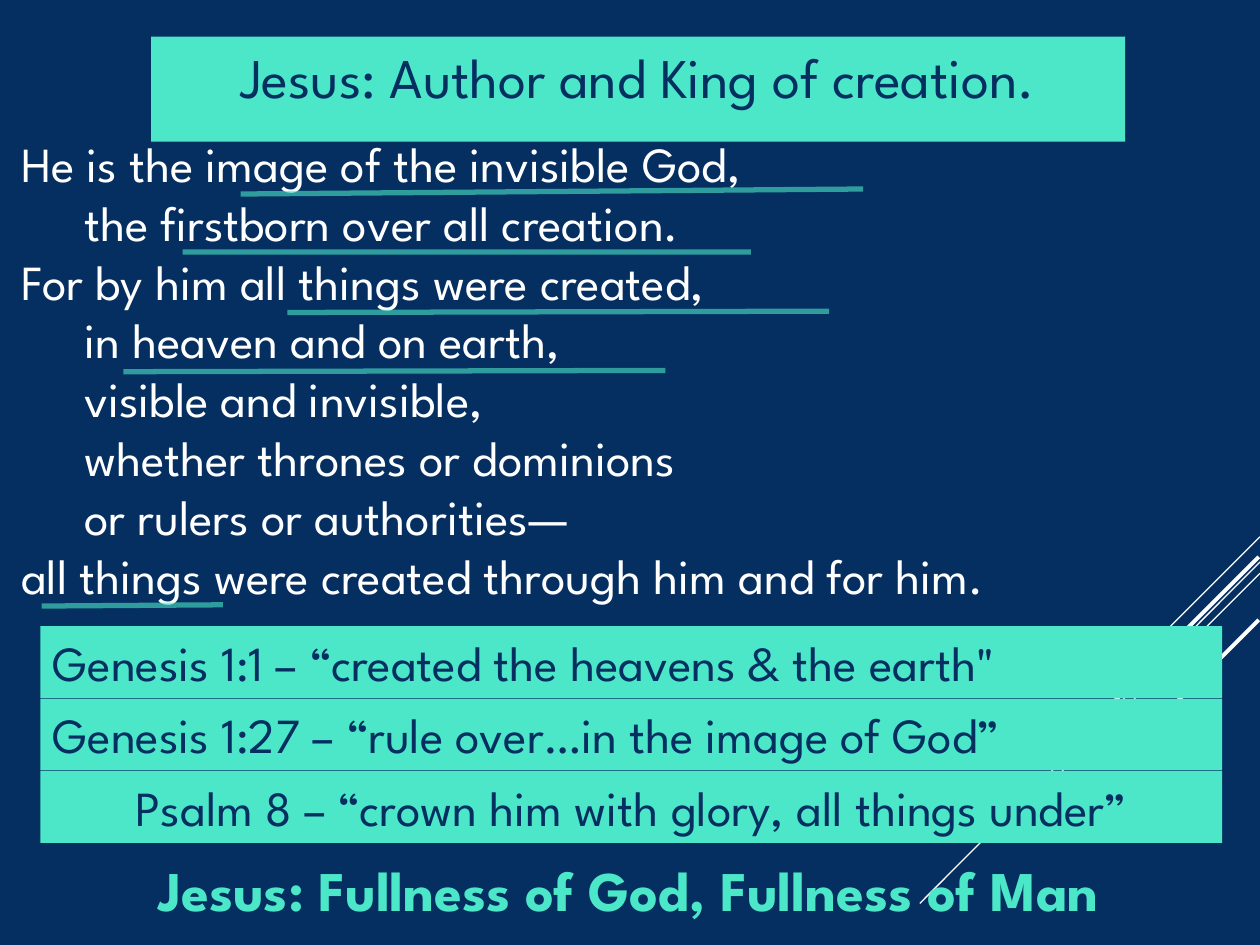
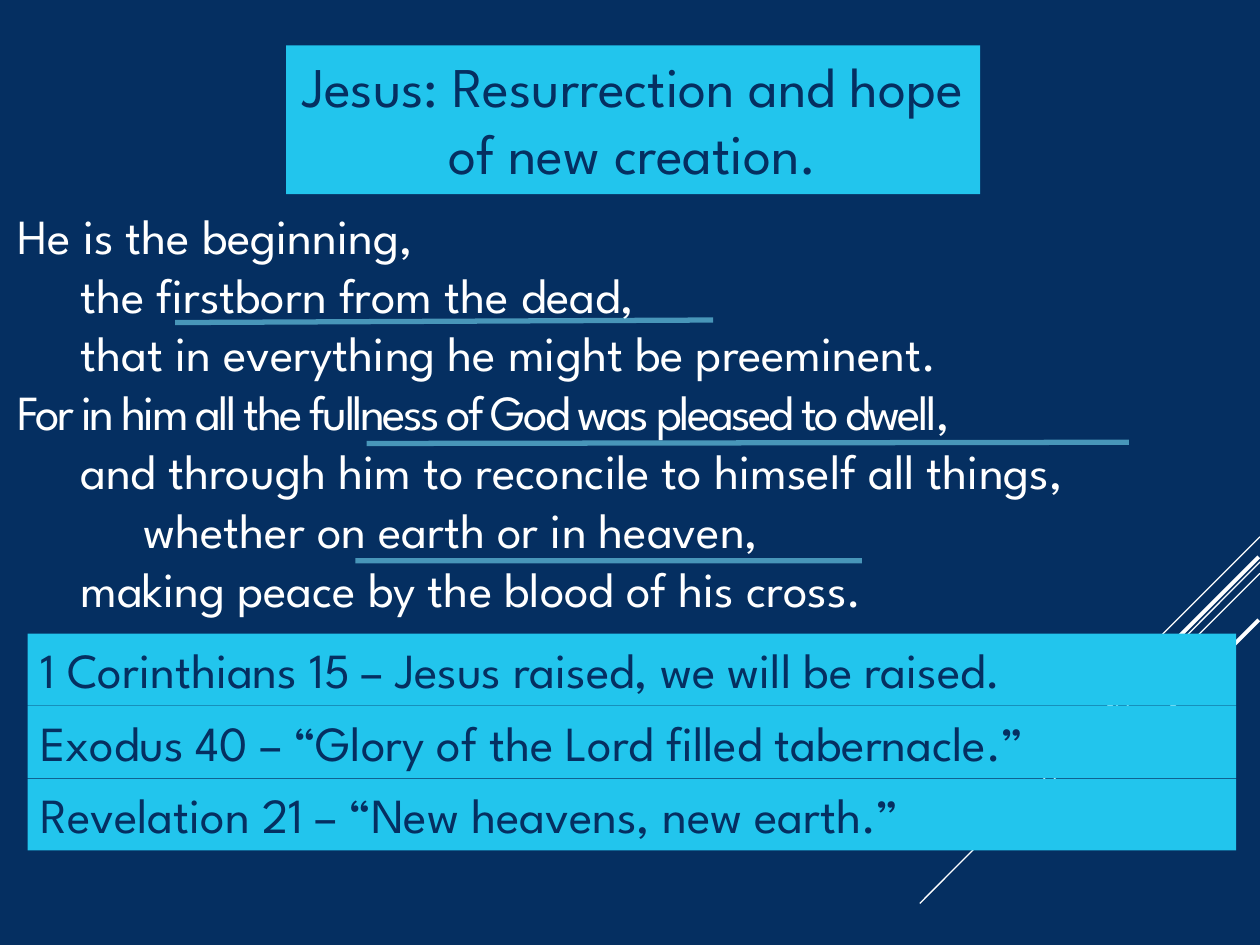
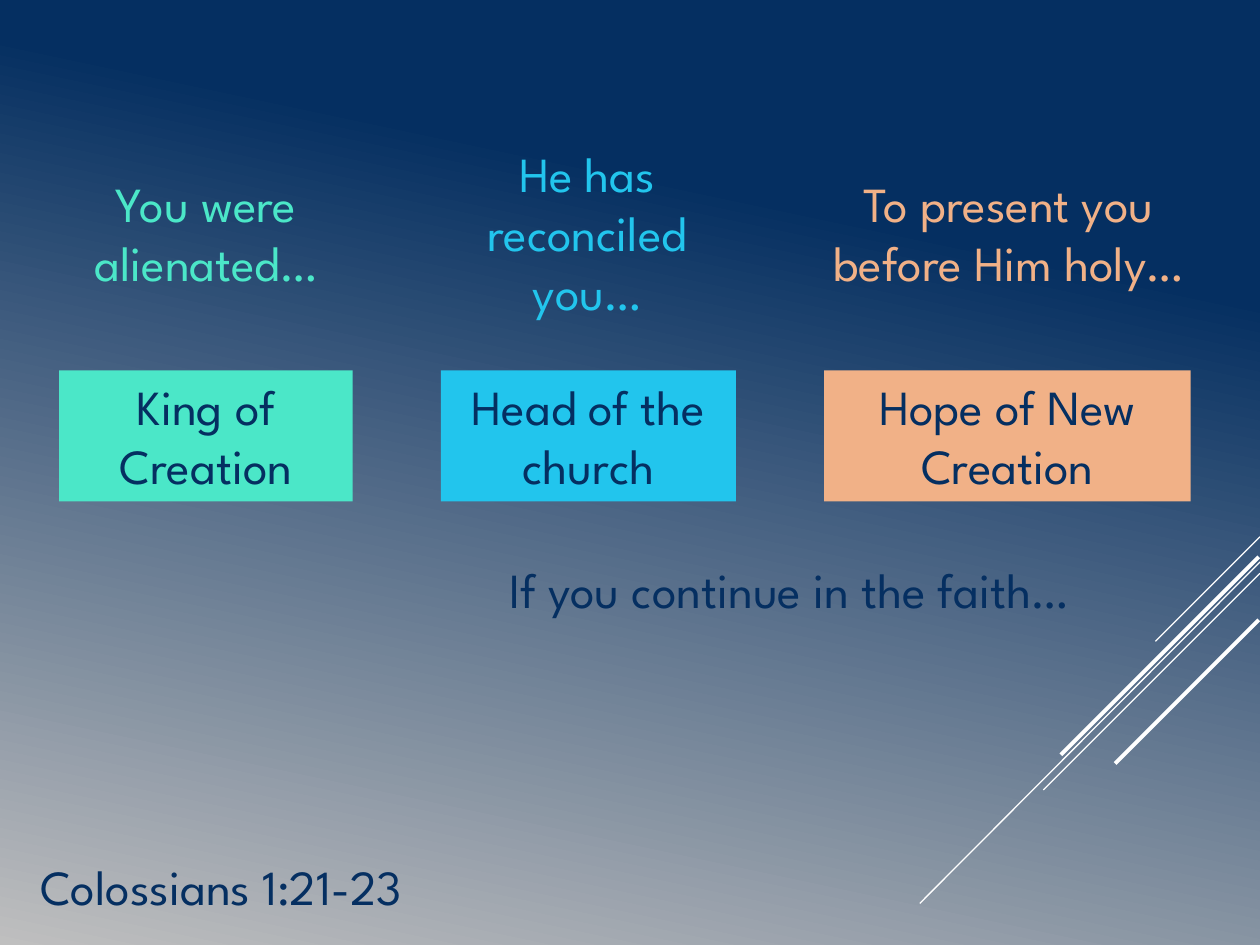
from dataclasses import dataclass

from lxml import etree
from pptx import Presentation
from pptx import util as u
from pptx.dml.color import RGBColor
from pptx.enum import shapes, text
from pptx.oxml import ns

NAVY = RGBColor(0x05, 0x2F, 0x61)
WHITE = RGBColor(0xFF, 0xFF, 0xFF)
SILVER = RGBColor(0xBF, 0xBF, 0xBF)
MINT = RGBColor(0x4B, 0xE7, 0xC8)
SKY = RGBColor(0x22, 0xC5, 0xED)
PALE_SKY = RGBColor(0x76, 0xDB, 0xF4)
PEACH = RGBColor(0xF1, 0xB1, 0x87)

FONT = "League Spartan"
BODY_SIZE = 28
TITLE_SIZE = 32
ROW_HEIGHT = 0.57
ROW_PITCH = 0.575
TITLE_ONLY, BLANK = 5, 6

DIAGONALS = [
    ((10, 4.26), (9.17, 5.09), 0.75),
    ((10, 4.46), (7.3, 7.17), 0.75),
    ((10, 4.55), (8.28, 6.27), 0.75),
    ((9.99, 4.42), (8.42, 5.99), 2.25),
    ((9.99, 4.92), (8.85, 6.06), 2.25),
]


@dataclass
class Line:
    text: str
    indent: int = 0
    tight: str = ""


def write(shape, lines, size=BODY_SIZE, color=NAVY, bold=False, centered=False):
    frame = shape.text_frame
    frame.word_wrap = True
    frame.auto_size = text.MSO_AUTO_SIZE.SHAPE_TO_FIT_TEXT
    frame.vertical_anchor = text.MSO_ANCHOR.TOP
    for index, line in enumerate(lines):
        paragraph = frame.paragraphs[0] if index == 0 else frame.add_paragraph()
        paragraph.alignment = text.PP_ALIGN.CENTER if centered else text.PP_ALIGN.LEFT
        if line.indent:
            properties = paragraph._p.get_or_add_pPr()
            properties.set("marL", str(u.Inches(0.5 * line.indent)))
            properties.set("indent", "0")
        for content, spacing in ((line.tight, "-150"), (line.text, "0")):
            if not content:
                continue
            run = paragraph.add_run()
            run.text = content
            run.font.name = FONT
            run.font.size = u.Pt(size)
            run.font.bold = bold
            run.font.color.rgb = color
            if line.tight:
                run.font._element.set("spc", spacing)


def inches(*values):
    return [u.Inches(value) for value in values]


def add_label(slide, area, lines, **style):
    write(slide.shapes.add_textbox(*inches(*area)), lines, **style)


def add_box(slide, area, caption, fill, **style):
    box = slide.shapes.add_shape(shapes.MSO_SHAPE.RECTANGLE, *inches(*area))
    box.shadow.inherit = False
    box.fill.solid()
    box.fill.fore_color.rgb = fill
    box.line.fill.background()
    write(box, [Line(caption)], **style)


def add_title(slide, area, caption, fill):
    title = slide.shapes.title
    title.left, title.top, title.width, title.height = inches(*area)
    title.fill.solid()
    title.fill.fore_color.rgb = fill
    write(title, [Line(caption)], size=TITLE_SIZE, centered=True)


def add_line(slide, start, end, color, width, opacity=100):
    line = slide.shapes.add_connector(
        shapes.MSO_CONNECTOR.STRAIGHT, *inches(*start, *end))
    line.line.color.rgb = color
    line.line.width = u.Pt(width)
    properties = line.element.spPr
    if opacity < 100:
        solid = properties.find(".//" + ns.qn("a:srgbClr"))
        etree.SubElement(solid, ns.qn("a:alpha")).set("val", str(opacity * 1000))
    etree.SubElement(properties, ns.qn("a:effectLst"))


def add_underlines(slide, spans, color):
    for start, end in spans:
        add_line(slide, start, end, color, 3, opacity=60)


def add_references(slide, left, top, width, references, fill):
    for index, (caption, centered) in enumerate(references):
        area = (left, top + index * ROW_PITCH, width, ROW_HEIGHT)
        add_box(slide, area, caption, fill, centered=centered)


def add_slide(presentation, layout):
    slide = presentation.slides.add_slide(presentation.slide_layouts[layout])
    for start, end, width in DIAGONALS:
        add_line(slide, start, end, WHITE, width)
    return slide


def build_creation(presentation):
    slide = add_slide(presentation, TITLE_ONLY)
    add_title(slide, (1.2, 0.29, 7.73, 0.64),
              "Jesus: Author and King of creation.", MINT)
    add_label(slide, (0.07, 1.01, 9.87, 3.87), [
        Line("He is the image of the invisible God,"),
        Line("the firstborn over all creation.", 1),
        Line("For by him all things were created,"),
        Line("in heaven and on earth,", 1),
        Line("visible and invisible,", 1),
        Line("whether thrones or dominions", 1),
        Line("or rulers or authorities—", 1),
        Line("all things were created through him and for him."),
    ], color=WHITE)
    add_references(slide, 0.32, 4.97, 9.38, [
        ("Genesis 1:1 – “created the heavens & the earth\"", False),
        ("Genesis 1:27 – “rule over…in the image of God”", False),
        ("Psalm 8 – “crown him with glory, all things under”", True),
    ], MINT)
    add_underlines(slide, [
        ((1.91, 1.54), (6.85, 1.5)),
        ((1.45, 2), (5.96, 2)),
        ((2.28, 2.48), (6.58, 2.47)),
        ((0.98, 2.95), (5.28, 2.94)),
        ((0.33, 4.81), (1.77, 4.8)),
    ], MINT)
    add_label(slide, (0.31, 6.74, 9.37, 0.64),
              [Line("Jesus: Fullness of God, Fullness of Man")],
              size=TITLE_SIZE, color=MINT, bold=True, centered=True)


def build_resurrection(presentation):
    slide = add_slide(presentation, TITLE_ONLY)
    add_title(slide, (2.27, 0.36, 5.51, 1.18),
              "Jesus: Resurrection and hope of new creation.", SKY)
    add_label(slide, (0.04, 1.58, 9.96, 3.4), [
        Line("He is the beginning,"),
        Line("the firstborn from the dead,", 1),
        Line("that in everything he might be preeminent.", 1),
        Line(",", tight="For in him all the fullness of God was pleased to dwell"),
        Line("and through him to reconcile to himself all things,", 1),
        Line("whether on earth or in heaven,", 2),
        Line("making peace by the blood of his cross.", 1),
    ], color=WHITE)
    add_references(slide, 0.22, 5.03, 9.59, [
        ("1 Corinthians 15 – Jesus raised, we will be raised.", False),
        ("Exodus 40 – “Glory of the Lord filled tabernacle.”", False),
        ("Revelation 21 – “New heavens, new earth.”", False),
    ], SKY)
    add_underlines(slide, [
        ((1.39, 2.56), (5.66, 2.54)),
        ((2.91, 3.52), (8.96, 3.51)),
        ((2.82, 4.45), (6.84, 4.45)),
    ], PALE_SKY)


def build_response(presentation):
    slide = add_slide(presentation, BLANK)
    fill = slide.background.fill
    fill.gradient()
    fill.gradient_angle = 258
    for stop, position, color in zip(fill.gradient_stops, (0.25, 1), (NAVY, SILVER)):
        stop.position = position
        stop.color.rgb = color
    columns = [
        (MINT, "You were alienated…", (0.34, 1.33, 2.59, 1.04),
         "King of Creation", 0.47, 2.33),
        (SKY, "He has reconciled you…", (3.31, 1.09, 2.7, 1.51),
         "Head of the church", 3.5, 2.34),
        (PEACH, "To present you before Him holy…", (6.2, 1.33, 3.61, 1.04),
         "Hope of New Creation", 6.54, 2.91),
    ]
    for color, promise, area, role, left, width in columns:
        add_label(slide, area, [Line(promise)], color=color, centered=True)
        add_box(slide, (left, 2.94, width, 1.04), role, color, centered=True)
    add_label(slide, (3.5, 4.39, 5.52, ROW_HEIGHT),
              [Line("If you continue in the faith…")], centered=True)
    add_label(slide, (0.22, 6.75, 4.63, ROW_HEIGHT), [Line("Colossians 1:21-23")])


def main():
    presentation = Presentation()
    presentation.slide_width = u.Inches(10)
    presentation.slide_height = u.Inches(7.5)
    background = presentation.slide_master.background.fill
    background.solid()
    background.fore_color.rgb = NAVY
    build_creation(presentation)
    build_resurrection(presentation)
    build_response(presentation)
    presentation.save("out.pptx")


if __name__ == "__main__":
    main()
